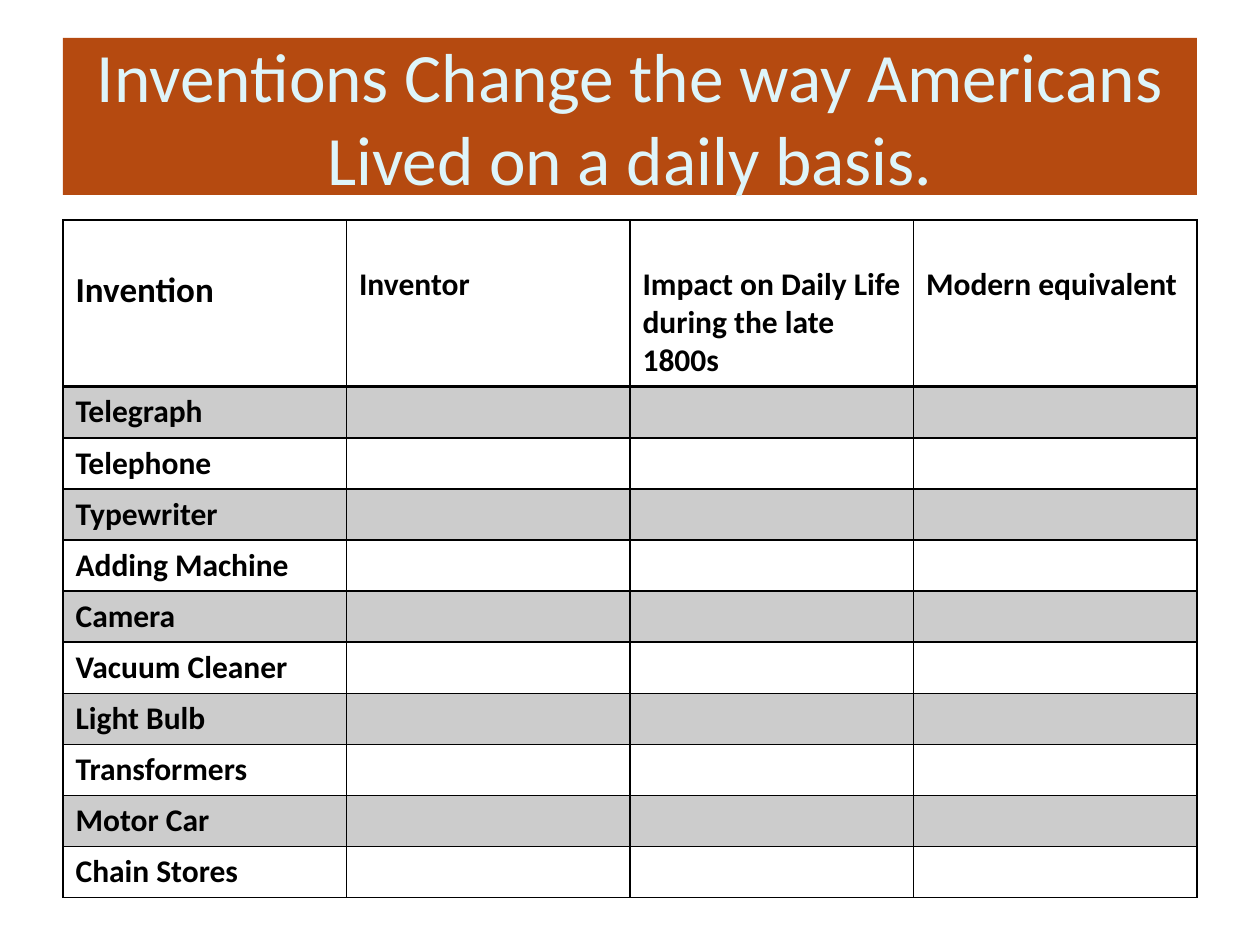
from lxml.etree import SubElement as Sub
from pptx import Presentation
from pptx.dml.color import RGBColor as RGB
from pptx.enum.shapes import MSO_SHAPE as SHAPE
from pptx.enum.text import MSO_ANCHOR as ANCHOR, PP_ALIGN as ALIGN
from pptx.oxml.ns import qn
from pptx.util import Emu, Pt

COLORS = {"rust": "B54A10", "ice": "DEF5FA", "ink": "000000", "band": "CCCCCC"}
TITLE = "Inventions Change the way Americans Lived on a daily basis."
HEADS = ["Invention", "Inventor", "Impact on Daily Life during the late 1800s",
         "Modern equivalent"]
ITEMS = ["Telegraph", "Telephone", "Typewriter", "Adding Machine", "Camera",
         "Vacuum Cleaner", "Light Bulb", "Transformers", "Motor Car", "Chain Stores"]
LEFT, WIDTH = 63, 1134
HEAD_H, ROW_H = 166, 51


def px(n):
    return Emu(round(n * 914400 / 126))


def color(name):
    return RGB.from_string(COLORS[name])


def style(para, tone, **form):
    para.font.color.rgb = color(tone)
    for key, val in {"name": "Calibri", **form}.items():
        setattr(para.font, key, val)


def border(cell, widths):
    """Draw the cell's edges; widths maps L, R, T, B to points."""
    props = cell._tc.get_or_add_tcPr()
    for side, width in widths.items():
        line = Sub(props, qn(f"a:ln{side}"), w=str(Pt(width)))
        fill = Sub(line, qn("a:solidFill"))
        Sub(fill, qn("a:srgbClr"), val=COLORS["ink"])


def add_title(slide):
    box = slide.shapes.add_shape(SHAPE.RECTANGLE, px(LEFT), px(38), px(WIDTH), px(157))
    box.shadow.inherit = False
    box.fill.solid()
    box.fill.fore_color.rgb = color("rust")
    box.line.fill.background()
    frame = box.text_frame
    frame.text = TITLE
    frame.word_wrap = True
    frame.vertical_anchor = ANCHOR.MIDDLE
    para = frame.paragraphs[0]
    para.alignment = ALIGN.CENTER
    style(para, "ice", size=Pt(39.6))


def fill_cell(cell, text, row, col):
    size = 20 if row == col == 0 else 18
    cell.text = text
    style(cell.text_frame.paragraphs[0], "ink", size=Pt(size), bold=True)
    border(cell, {"L": 1, "R": 1, "T": 2 if row == 1 else 1, "B": 2 if row == 0 else 1})
    if row == 0:
        cell.margin_top = px(49 if col == 0 else 45)
    if row % 2:
        cell.fill.solid()
        cell.fill.fore_color.rgb = color("band")
    else:
        cell.fill.background()


def add_grid(slide):
    rows = [HEADS] + [[item] + [""] * (len(HEADS) - 1) for item in ITEMS]
    high = HEAD_H + ROW_H * len(ITEMS)
    table = slide.shapes.add_table(len(rows), len(HEADS), px(LEFT), px(220),
                                   px(WIDTH), px(high)).table
    table.first_row = table.horz_banding = False
    for r, texts in enumerate(rows):
        table.rows[r].height = px(ROW_H if r else HEAD_H)
        for c, text in enumerate(texts):
            fill_cell(table.cell(r, c), text, r, c)


def main():
    deck = Presentation()
    deck.slide_width, deck.slide_height = px(1260), px(945)
    slide = deck.slides.add_slide(deck.slide_layouts[6])
    add_title(slide)
    add_grid(slide)
    deck.save("out.pptx")


if __name__ == "__main__":
    main()
